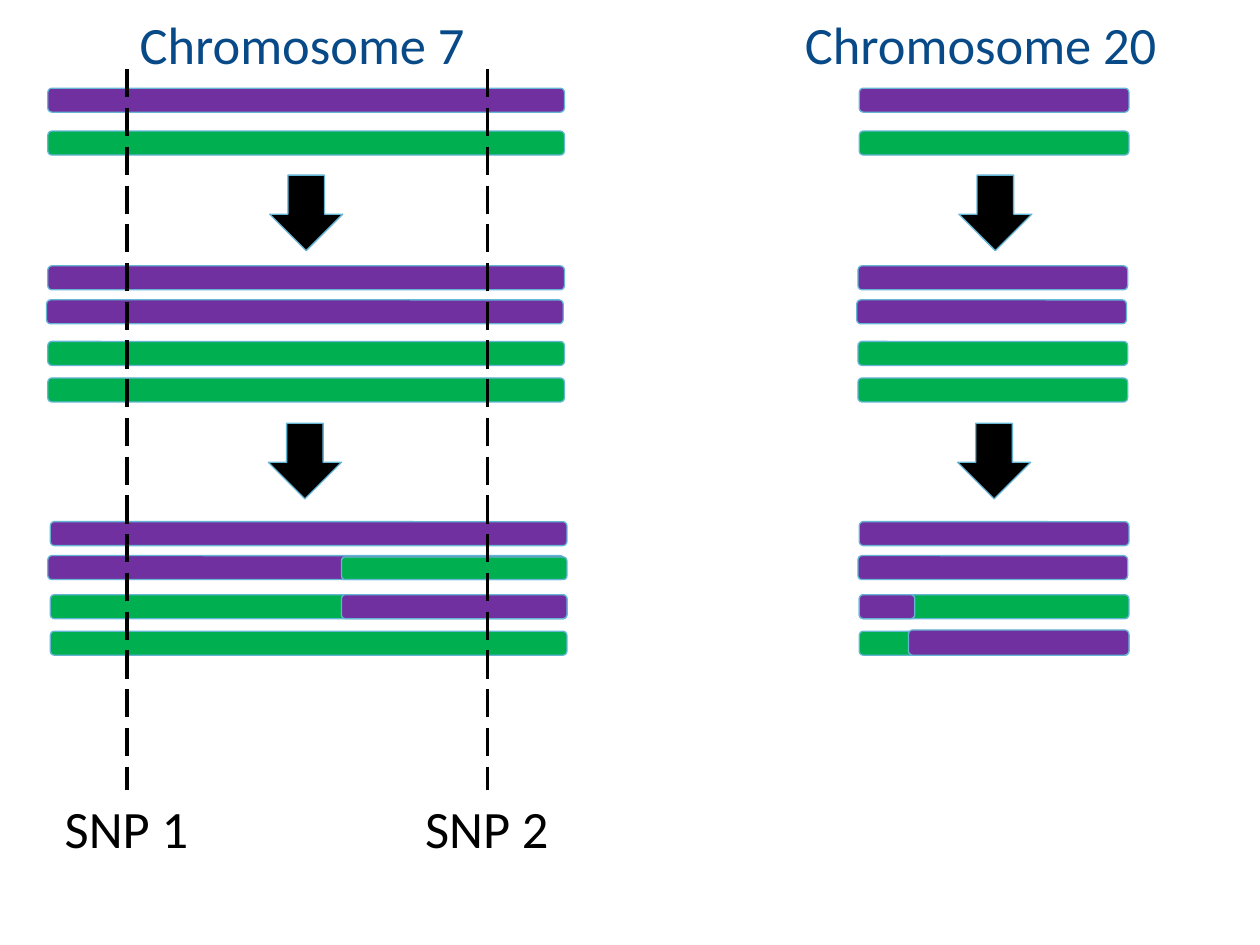
import pptx
import pptx.dml.color
import pptx.enum.dml
import pptx.enum.shapes
import pptx.enum.text
import pptx.oxml.ns
import pptx.util
from lxml import etree
from pptx.util import Inches

COLORS = {
    "purple": "7030A0",
    "green": "00B050",
    "outline": "65B6D5",
    "title": "084A87",
    "black": "000000",
}
FONT = {"name": "Calibri", "size": pptx.util.Pt(30)}
FRAME = {
    "word_wrap": False,
    "auto_size": pptx.enum.text.MSO_AUTO_SIZE.SHAPE_TO_FIT_TEXT,
}
SHAPES = pptx.enum.shapes.MSO_SHAPE

BAR_HEIGHT = 0.19
LABEL_WIDTH, LABEL_HEIGHT = 1.19, 0.61
MARKER_TOP, MARKER_BOTTOM = 0.55, 6.27

# Strands of the three stages: top and colour
STRANDS = [
    (0.7, "purple"), (1.04, "green"),
    (2.11, "purple"), (2.38, "purple"), (2.71, "green"), (3, "green"),
    (4.14, "purple"), (4.41, "purple"), (4.72, "green"), (5.01, "green"),
]
ARROW_TOPS = [1.39, 3.36]

# Lefts follow the strands; crossovers are left, top, width, height, colour
CHROMOSOMES = [
    {
        "title": ("Chromosome 7", 1.01, 2.81),
        "width": 4.1,
        "lefts": [0.38, 0.38, 0.38, 0.37, 0.38, 0.38, 0.4, 0.38, 0.4, 0.4],
        "arrow_lefts": [2.14, 2.13],
        "crossovers": [(2.71, 4.42, 1.79, 0.18, "green"),
                       (2.71, 4.72, 1.79, 0.19, "purple")],
    },
    {
        "title": ("Chromosome 20", 6.29, 3.02),
        "width": 2.14,
        "lefts": [6.82, 6.82, 6.81, 6.8, 6.81, 6.81, 6.82, 6.81, 6.82, 6.82],
        "arrow_lefts": [7.61, 7.6],
        "crossovers": [(6.82, 4.72, 0.44, 0.19, "purple"),
                       (7.21, 5, 1.75, 0.2, "purple")],
    },
]
SNPS = [("SNP 1", 1.01), ("SNP 2", 3.87)]


def rgb(color):
    return pptx.dml.color.RGBColor.from_string(COLORS[color])


def set_attributes(target, values):
    for name, value in values.items():
        setattr(target, name, value)


def add_block(slide, kind, left, top, width, height, color):
    shape = slide.shapes.add_shape(
        kind, Inches(left), Inches(top), Inches(width), Inches(height))
    shape.shadow.inherit = False
    shape.fill.solid()
    shape.fill.fore_color.rgb = rgb(color)
    shape.line.color.rgb = rgb("outline")
    shape.line.width = pptx.util.Pt(0.75)


def add_label(slide, text, left, top, width, color):
    box = slide.shapes.add_textbox(
        Inches(left), Inches(top), Inches(width), Inches(LABEL_HEIGHT))
    set_attributes(box.text_frame, FRAME)
    run = box.text_frame.paragraphs[0].add_run()
    run.text = text
    set_attributes(run.font, FONT)
    run.font.color.rgb = rgb(color)
    return box


def add_chromosome(slide, chromosome):
    text, left, width = chromosome["title"]
    add_label(slide, text, left, 0.05, width, "title")
    for left, (top, color) in zip(chromosome["lefts"], STRANDS):
        add_block(slide, SHAPES.ROUNDED_RECTANGLE, left, top,
                  chromosome["width"], BAR_HEIGHT, color)
    for crossover in chromosome["crossovers"]:
        add_block(slide, SHAPES.ROUNDED_RECTANGLE, *crossover)
    for left, top in zip(chromosome["arrow_lefts"], ARROW_TOPS):
        add_block(slide, SHAPES.DOWN_ARROW, left, top, 0.58, 0.6, "black")


def add_snp(slide, text, center):
    label = add_label(slide, text, center - LABEL_WIDTH / 2, MARKER_BOTTOM,
                      LABEL_WIDTH, "black")
    marker = slide.shapes.add_connector(
        pptx.enum.shapes.MSO_CONNECTOR.STRAIGHT,
        Inches(center), Inches(MARKER_TOP),
        Inches(center), Inches(MARKER_BOTTOM))
    marker.end_connect(label, 0)
    marker.line.color.rgb = rgb("black")
    set_attributes(marker.line, {
        "width": pptx.util.Pt(2),
        "dash_style": pptx.enum.dml.MSO_LINE.LONG_DASH,
    })
    # An empty effect list removes the theme shadow
    etree.SubElement(marker._element.spPr, pptx.oxml.ns.qn("a:effectLst"))


def main():
    presentation = pptx.Presentation()
    presentation.slide_width = Inches(10)
    presentation.slide_height = Inches(7.5)
    slide = presentation.slides.add_slide(presentation.slide_layouts[6])

    # Chromosome pairs, their copies and the recombined strands
    for chromosome in CHROMOSOMES:
        add_chromosome(slide, chromosome)

    # SNP positions across all stages
    for text, center in SNPS:
        add_snp(slide, text, center)

    presentation.save("out.pptx")


if __name__ == "__main__":
    main()
